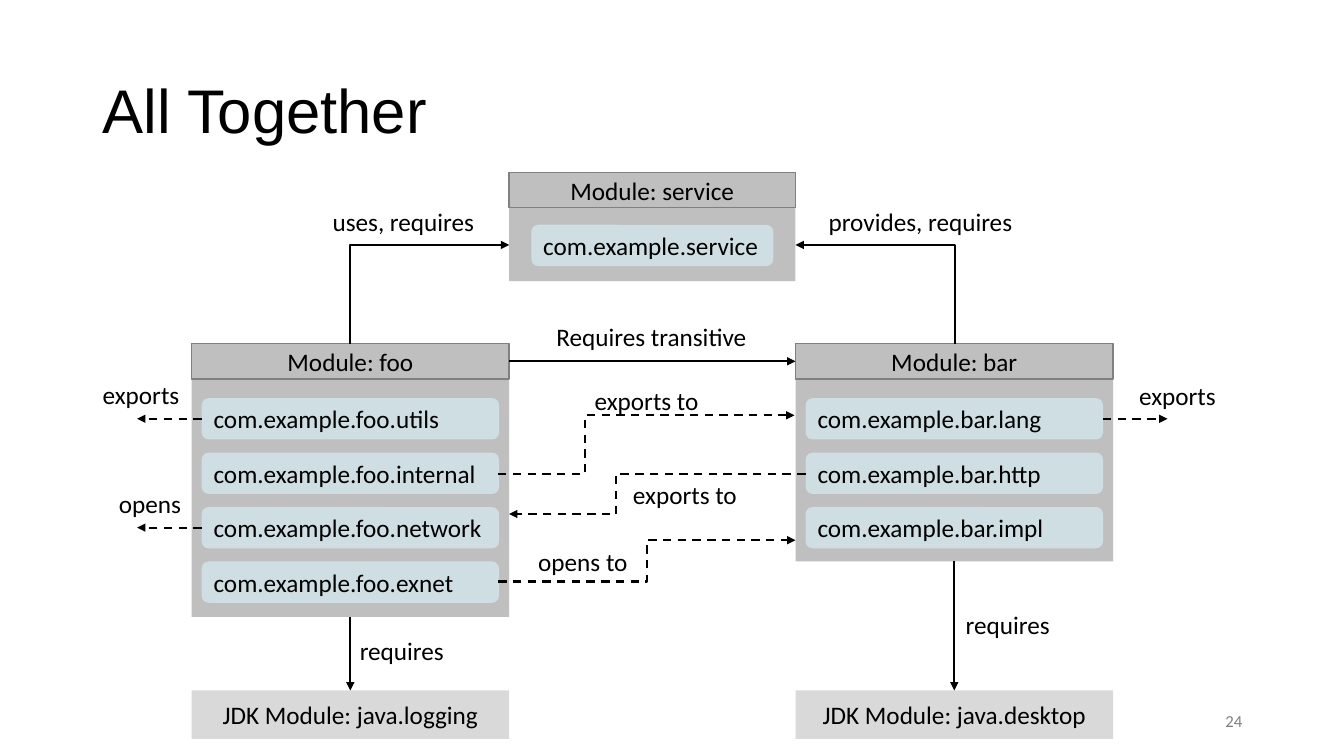
from lxml.etree import SubElement as Sub
from pptx import Presentation
from pptx.dml.color import RGBColor
from pptx.enum.dml import MSO_LINE as Dash
from pptx.enum.shapes import MSO_CONNECTOR as Link, MSO_SHAPE as Form
from pptx.enum.text import MSO_ANCHOR as Anchor, MSO_AUTO_SIZE as Auto, PP_ALIGN as Align
from pptx.oxml.ns import qn
from pptx.util import Inches, Pt

BLACK = RGBColor(0x00, 0x00, 0x00)
GRAY = RGBColor(0x80, 0x80, 0x80)
SILVER = RGBColor(0xBF, 0xBF, 0xBF)
PALE = RGBColor(0xD9, 0xD9, 0xD9)
BLUE = RGBColor(0xCE, 0xDE, 0xE2)
TOP, LEFT, BOTTOM, RIGHT = range(4)
FOO, BAR, WIDE = 1.9, 7.89, 3.15


class Board:
    """Draws the parts of a module diagram on one slide."""

    def __init__(self, slide):
        self.shapes = slide.shapes
        self.font = "Calibri"
        self.size = 18

    def put(self, frame, text, align=Align.LEFT, size=None, font=None, color=BLACK):
        para = frame.paragraphs[0]
        para.alignment = align
        run = para.add_run()
        run.text = text
        run.font.name = font or self.font
        run.font.size = Pt(size or self.size)
        run.font.color.rgb = color
        return para

    def text(self, x, y, w, h, text, **style):
        frame = self.shapes.add_textbox(Inches(x), Inches(y), Inches(w), Inches(h)).text_frame
        frame.word_wrap = True
        frame.vertical_anchor = Anchor.MIDDLE
        return self.put(frame, text, **style)

    def label(self, x, y, w, text):
        frame = self.shapes.add_textbox(Inches(x), Inches(y), Inches(w), Inches(0.4)).text_frame
        frame.word_wrap = False
        frame.auto_size = Auto.SHAPE_TO_FIT_TEXT
        self.put(frame, text)

    def box(self, x, y, w, h, fill, text="", form=Form.RECTANGLE, align=Align.CENTER, edge=None):
        shape = self.shapes.add_shape(form, Inches(x), Inches(y), Inches(w), Inches(h))
        shape.shadow.inherit = False
        shape.fill.solid()
        shape.fill.fore_color.rgb = fill
        if edge is None:
            shape.line.fill.background()
        else:
            shape.line.color.rgb = edge
            shape.line.width = Pt(1)
        if text:
            shape.text_frame.vertical_anchor = Anchor.MIDDLE
            self.put(shape.text_frame, text, align)
        return shape

    def unit(self, x, y, w, h, name, parts, pad, gap):
        body = self.box(x, y + 0.35, w, h, SILVER)
        packs = [
            self.box(x + pad, y + 0.35 + gap + 0.54 * i, w - 2 * pad, 0.41, BLUE,
                     f"com.example.{part}", Form.ROUNDED_RECTANGLE, Align.LEFT)
            for i, part in enumerate(parts)
        ]
        head = self.box(x, y, w, 0.35, SILVER, f"Module: {name}", edge=GRAY)
        return head, body, packs

    def arrow(self, x1, y1, x2, y2, dash=False, kind=Link.STRAIGHT):
        link = self.shapes.add_connector(kind, Inches(x1), Inches(y1), Inches(x2), Inches(y2))
        link.line.color.rgb = BLACK
        link.line.width = Pt(1.5)
        if dash:
            link.line.dash_style = Dash.DASH
        props = link.element.spPr
        Sub(props.find(qn("a:ln")), qn("a:tailEnd"), type="triangle")
        Sub(props, qn("a:effectLst"))
        return link

    def step(self, x1, y1, x2, y2, bend):
        link = self.arrow(x1, y1, x2, y2, True, Link.ELBOW)
        shape = link.element.spPr.find(qn("a:prstGeom"))
        Sub(shape.find(qn("a:avLst")), qn("a:gd"), name="adj1", fmla=f"val {round(bend * 100000)}")

    def corner(self, x1, y1, x2, y2):
        mid_x, mid_y = (x1 + x2) / 2, (y1 + y2) / 2
        side = (y1 - y2) / 2 if x2 > x1 else (y2 - y1) / 2
        half = abs(x2 - x1) / 2
        link = self.arrow(mid_x + side, mid_y + half, mid_x - side, mid_y - half, kind=Link.ELBOW)
        props = link.element.spPr
        props.find(qn("a:xfrm")).set("rot", str((90 if x2 > x1 else 270) * 60000))
        props.find(qn("a:prstGeom")).set("prst", "bentConnector2")


def main():
    deck = Presentation()
    deck.slide_width, deck.slide_height = Inches(13.33), Inches(7.5)
    board = Board(deck.slides.add_slide(deck.slide_layouts[6]))

    title = board.text(0.92, 0.4, 11.5, 1.45, "All Together", size=44, font="Arial")
    title.line_spacing = 0.9
    board.text(9.42, 6.95, 3, 0.4, "24", align=Align.RIGHT, size=12, color=GRAY)

    foo, foo_body, foo_packs = board.unit(
        FOO, 3.41, WIDE, 2.36, "foo",
        ["foo.utils", "foo.internal", "foo.network", "foo.exnet"], 0.1, 0.19)
    bar, bar_body, bar_packs = board.unit(
        BAR, 3.41, WIDE, 1.81, "bar", ["bar.lang", "bar.http", "bar.impl"], 0.1, 0.19)
    board.unit(5.05, 1.71, 2.84, 0.73, "service", ["service"], 0.22, 0.17)

    for x, body, low, name in ((FOO, foo_body, 6.12, "logging"), (BAR, bar_body, 5.57, "desktop")):
        base = board.box(x, 6.85, WIDE, 0.48, PALE, f"JDK Module: java.{name}")
        mid = x + WIDE / 2
        link = board.arrow(mid, low, mid, 6.85)
        link.begin_connect(body, BOTTOM)
        link.end_connect(base, TOP)

    for pack, side, x, y, end in (
        (foo_packs[0], LEFT, 2, 4.155, 1.36),
        (foo_packs[2], LEFT, 2, 5.235, 1.36),
        (bar_packs[0], RIGHT, 10.94, 4.155, 11.58),
    ):
        board.arrow(x, y, end, y, True).begin_connect(pack, side)

    link = board.arrow(5.05, 3.585, BAR, 3.585)
    link.begin_connect(foo, RIGHT)
    link.end_connect(bar, LEFT)

    for step in (
        (4.94, 4.7, 7.88, 4.12, 0.294),
        (7.99, 4.7, 5.05, 5.1, 0.638),
        (4.94, 5.77, 7.89, 5.36, 0.5),
    ):
        board.step(*step)
    board.corner(3.47, 3.41, 5.05, 2.43)
    board.corner(9.47, 3.41, 7.89, 2.43)

    for label in (
        (3.47, 6.25, 1.05, "requires"),
        (9.48, 6, 1.05, "requires"),
        (0.92, 3.71, 0.97, "exports"),
        (1.08, 4.8, 0.83, "opens"),
        (11.2, 3.72, 0.97, "exports"),
        (5.42, 3.14, 2.11, "Requires transitive"),
        (5.8, 3.77, 1.24, "exports to"),
        (6.18, 4.71, 1.24, "exports to"),
        (5.24, 5.37, 1.1, "opens to"),
        (3.2, 2, 1.62, "uses, requires"),
        (8.12, 2, 2.05, "provides, requires"),
    ):
        board.label(*label)

    deck.save("out.pptx")


if __name__ == "__main__":
    main()
